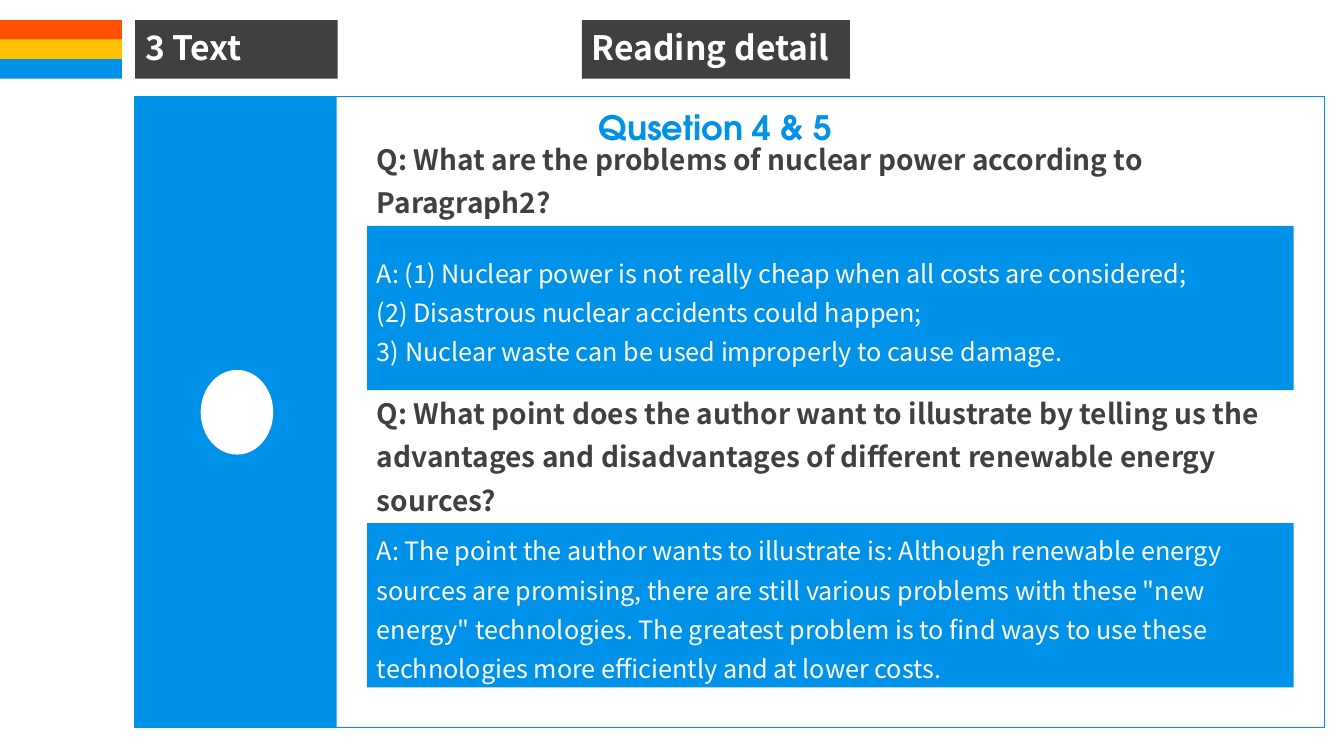
from dataclasses import dataclass

from pptx import Presentation
from pptx.dml.color import RGBColor
from pptx.enum.shapes import MSO_SHAPE
from pptx.enum.text import MSO_ANCHOR, MSO_AUTO_SIZE, PP_ALIGN
from pptx.util import Inches, Pt

RECT, OVAL = MSO_SHAPE.RECTANGLE, MSO_SHAPE.OVAL
TOP, MIDDLE = MSO_ANCHOR.TOP, MSO_ANCHOR.MIDDLE
LEFT, CENTER = PP_ALIGN.LEFT, PP_ALIGN.CENTER
NO_FIT = MSO_AUTO_SIZE.NONE


@dataclass(frozen=True)
class Theme:
    blue: str = "0092E8"
    gold: str = "FFC100"
    orange: str = "FF5100"
    dark: str = "404040"
    white: str = "FFFFFF"
    sans: str = "Noto Sans CJK SC"
    round: str = "TeX Gyre Adventor"
    head: int = 24
    ask: int = 20
    reply: int = 18


THEME = Theme()


def color(code):
    return RGBColor.from_string(code)


def paint(shape, code):
    shape.fill.solid()
    shape.fill.fore_color.rgb = color(code)


def add_block(slide, box, fill, kind=RECT, line=None):
    shape = slide.shapes.add_shape(kind, *map(Inches, box))
    shape.shadow.inherit = False
    paint(shape, fill)
    if line:
        shape.line.color.rgb = color(line)
        shape.line.width = Pt(1)
    else:
        shape.line.fill.background()
    return shape


def write(shape, lines, size, ink, bold=False, font=THEME.sans,
          align=LEFT, anchor=TOP, space=1.3):
    frame = shape.text_frame
    frame.word_wrap = True
    frame.auto_size = NO_FIT
    frame.vertical_anchor = anchor
    frame.text = "\n".join(lines)
    for para in frame.paragraphs:
        para.alignment = align
        para.line_spacing = space
        para.space_before = Pt(0)
        para.font.name = font
        para.font.size = Pt(size)
        para.font.bold = bold
        para.font.color.rgb = color(ink)


def add_label(slide, box, text, size, ink, **style):
    shape = slide.shapes.add_textbox(*map(Inches, box))
    write(shape, [text], size, ink, bold=True, **style)


def add_answer(slide, top, lines):
    shape = add_block(slide, (3.64, top, 9.19, 1.63), THEME.blue)
    write(shape, lines, THEME.reply, THEME.white, anchor=MIDDLE)


def add_ask(slide, top, height, text):
    add_label(slide, (3.64, top, 8.99, height), text, THEME.ask, THEME.dark)


def write_head(shape, text):
    write(shape, [text], THEME.head, THEME.white, bold=True,
          anchor=MIDDLE, space=0.9)


def set_title(slide, box, text):
    title = slide.shapes.title
    title.left, title.top, title.width, title.height = map(Inches, box)
    paint(title, THEME.dark)
    write_head(title, text)


def main():
    deck = Presentation()
    deck.slide_width, deck.slide_height = Inches(13.33), Inches(7.5)
    slide = deck.slides.add_slide(deck.slide_layouts[5])

    # Header: stripes, section and title
    stripe = 0.58 / 3
    for row, fill in enumerate((THEME.orange, THEME.gold, THEME.blue)):
        add_block(slide, (0, 0.2 + row * stripe, 1.21, stripe), fill)
    write_head(add_block(slide, (1.34, 0.2, 2.01, 0.58), THEME.dark), "3 Text")
    set_title(slide, (5.77, 0.2, 2.66, 0.58), "Reading detail")

    # Panel with side band and dot
    add_block(slide, (1.34, 0.96, 11.8, 6.26), THEME.white, line=THEME.blue)
    add_block(slide, (1.34, 0.96, 2, 6.26), THEME.blue)
    add_block(slide, (1.99, 3.67, 0.72, 0.84), THEME.white, kind=OVAL)
    add_label(slide, (4.35, 0.89, 5.49, 0.62), "Qusetion 4 & 5", THEME.head,
              THEME.blue, font=THEME.round, align=CENTER)

    # Questions and answers
    add_ask(slide, 1.26, 0.98, "Q: What are the problems of nuclear power "
            "according to Paragraph2?")
    add_answer(slide, 2.24, [
        "A: (1) Nuclear power is not really cheap when all costs are "
        "considered;",
        "(2) Disastrous nuclear accidents could happen;",
        "3) Nuclear waste can be used improperly to cause damage.",
    ])
    add_ask(slide, 3.78, 1.41, "Q: What point does the author want to "
            "illustrate by telling us the advantages and disadvantages of "
            "different renewable energy sources?")
    add_answer(slide, 5.19, [
        "A: The point the author wants to illustrate is: Although renewable "
        "energy sources are promising, there are still various problems with "
        'these "new energy" technologies. The greatest problem is to find '
        "ways to use these technologies more efficiently and at lower costs.",
    ])

    deck.save("out.pptx")


if __name__ == "__main__":
    main()
